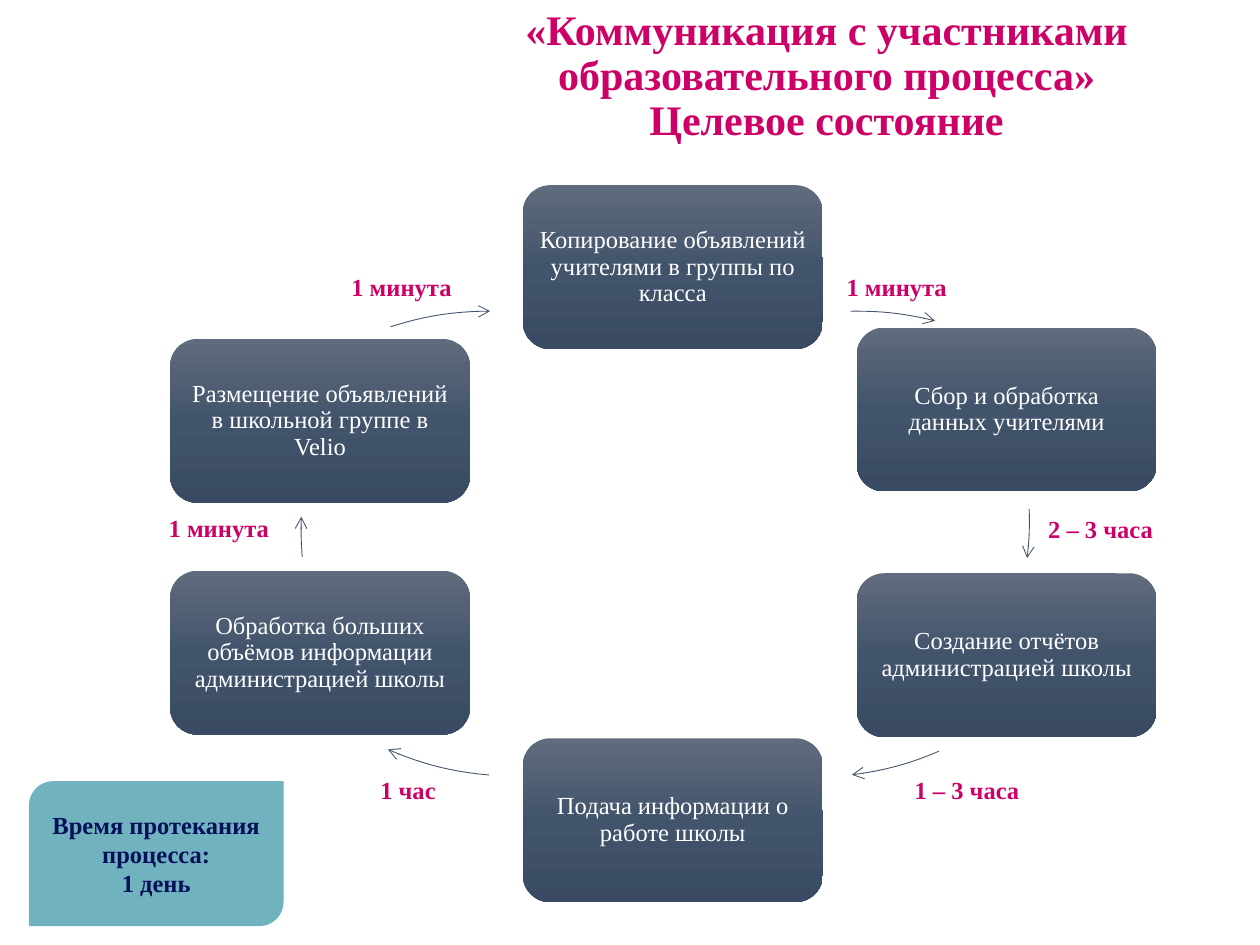
import copy
import dataclasses

import pptx
import pptx.dml.color
import pptx.enum.shapes
import pptx.enum.text
import pptx.oxml
import pptx.oxml.ns
import pptx.util

SHAPES = pptx.enum.shapes.MSO_SHAPE
ALIGN = pptx.enum.text.PP_ALIGN
ANCHOR = pptx.enum.text.MSO_ANCHOR
COLUMNS, ROWS = 100, 75
CELL = pptx.util.Inches(10) // COLUMNS


@dataclasses.dataclass(frozen=True)
class Theme:
    """Colours and type of the slide."""

    font: str = "Times New Roman"
    title_size: int = 24
    body_size: int = 14
    accent: str = "CC0066"
    node_text: str = "FFFFFF"
    node_gradient: tuple = ((0, "606B7D"), (0.5, "42546C"), (1, "394A62"))
    arrow: str = "44546A"
    arrow_width: float = 0.5
    total_fill: str = "71B2BF"
    total_text: str = "04105A"


@dataclasses.dataclass(frozen=True)
class Box:
    """A rectangle in grid columns and rows."""

    left: float
    top: float
    width: float
    height: float

    def inner(self, left, top, width, height):
        """Return a box placed relative to this one."""
        return Box(self.left + left, self.top + top, width, height)

    def lengths(self):
        """Return left, top, width and height in slide units."""
        return [round(value * CELL) for value in dataclasses.astuple(self)]


THEME = Theme()
NODE_WIDTH, NODE_HEIGHT = 23.8, 13
LABEL_HEIGHT = 3.4
ARC_RADIUS = 25.7
DEGREE = 0.6

NODES = (
    (28, 0, "Копирование объявлений учителями в группы по класса"),
    (54.5, 11.3, "Сбор и обработка данных учителями"),
    (54.5, 30.8, "Создание отчётов администрацией школы"),
    (28, 43.9, "Подача информации о работе школы"),
    (0, 30.6, "Обработка больших объёмов информации администрацией школы"),
    (0, 12.2, "Размещение объявлений в школьной группе в Velio"),
)
ARCS = (
    (54.5, 35.7, 268.9, 284),
    (42.5, 26.6, 358, 6.7),
    (50.9, 21.3, 66.8, 82.8),
    (27.5, 21.2, 94.9, 113.4),
    (36.1, 27.3, 175.1, 182.2),
    (25.4, 35.7, 252.1, 270),
)
LABELS = (
    (52.7, 6.4, 11.8, "1 минута"),
    (68.7, 25.6, 11.8, "2 – 3 часа"),
    (58.1, 46.3, 11.8, "1 – 3 часа"),
    (15.7, 46.3, 7.4, "1 час"),
    (-1.1, 25.5, 11.8, "1 минута"),
    (13.4, 6.4, 11.9, "1 минута"),
)


def rgb(value):
    """Return a colour from its hexadecimal form."""
    return pptx.dml.color.RGBColor.from_string(value)


def write(paragraph, text, size, colour, bold=False, align=ALIGN.CENTER, spacing=None):
    """Add one styled run to a paragraph and return the run."""
    paragraph.alignment = align
    paragraph.line_spacing = spacing
    run = paragraph.add_run()
    run.text = text
    run.font.name = THEME.font
    run.font.size = pptx.util.Pt(size)
    run.font.bold = bold
    run.font.color.rgb = rgb(colour)
    return run


def add_preset(slide, kind, box):
    """Add a preset shape without shadow or outline."""
    shape = slide.shapes.add_shape(kind, *box.lengths())
    shape.shadow.inherit = False
    shape.line.fill.background()
    shape.text_frame.word_wrap = True
    shape.text_frame.vertical_anchor = ANCHOR.MIDDLE
    return shape


def fill_gradient(shape, stops):
    """Fill a shape with a gradient running from top to bottom."""
    shape.fill.gradient()
    shape.fill.gradient_angle = 270
    stop_list = shape._element.spPr.find(".//" + pptx.oxml.ns.qn("a:gsLst"))
    while len(stop_list) < len(stops):
        stop_list.append(copy.deepcopy(stop_list[0]))
    for stop, (position, colour) in zip(shape.fill.gradient_stops, stops):
        stop.position = position
        stop.color.rgb = rgb(colour)


def add_node(slide, box, text):
    """Add one step of the cycle."""
    shape = add_preset(slide, SHAPES.ROUNDED_RECTANGLE, box)
    fill_gradient(shape, THEME.node_gradient)
    frame = shape.text_frame
    frame.margin_left = frame.margin_right = pptx.util.Inches(0.06)
    frame.margin_top = frame.margin_bottom = pptx.util.Inches(0.06)
    write(frame.paragraphs[0], text, THEME.body_size, THEME.node_text, spacing=0.9)


def add_arc_arrow(slide, box, start, end):
    """Add a clockwise arc with an arrowhead at its end angle."""
    shape = add_preset(slide, SHAPES.ARC, box)
    shape.adjustments[0] = start * DEGREE
    shape.adjustments[1] = end * DEGREE
    shape.fill.background()
    shape.line.color.rgb = rgb(THEME.arrow)
    shape.line.width = pptx.util.Pt(THEME.arrow_width)
    line = shape._element.spPr.find(pptx.oxml.ns.qn("a:ln"))
    namespace = pptx.oxml.ns.nsdecls("a")
    line.append(pptx.oxml.parse_xml(f'<a:tailEnd {namespace} type="arrow"/>'))


def add_label(slide, box, text):
    """Add the duration beside an arrow."""
    frame = slide.shapes.add_textbox(*box.lengths()).text_frame
    frame.word_wrap = True
    frame.auto_size = pptx.enum.text.MSO_AUTO_SIZE.SHAPE_TO_FIT_TEXT
    write(frame.paragraphs[0], text, THEME.body_size, THEME.accent, True, ALIGN.LEFT)


def add_title(slide, box):
    """Add the two-part heading."""
    frame = slide.shapes.add_textbox(*box.lengths()).text_frame
    frame.word_wrap = True
    frame.vertical_anchor = ANCHOR.MIDDLE
    paragraph = frame.paragraphs[0]
    style = (THEME.title_size, THEME.accent, True, ALIGN.CENTER, 0.9)
    write(paragraph, "«Коммуникация с участниками образовательного процесса»", *style)
    paragraph.add_line_break()
    write(paragraph, "Целевое состояние", *style)


def add_cycle(slide, box):
    """Add the steps, arrows and durations of the process."""
    for (left, top, text), (x, y, start, end) in zip(NODES, ARCS):
        add_node(slide, box.inner(left, top, NODE_WIDTH, NODE_HEIGHT), text)
        circle = box.inner(x - ARC_RADIUS, y - ARC_RADIUS, 2 * ARC_RADIUS, 2 * ARC_RADIUS)
        add_arc_arrow(slide, circle, start, end)
    for left, top, width, text in LABELS:
        add_label(slide, box.inner(left, top, width, LABEL_HEIGHT), text)


def add_total(slide, box):
    """Add the total duration of the process."""
    shape = add_preset(slide, SHAPES.ROUND_2_DIAG_RECTANGLE, box)
    shape.fill.solid()
    shape.fill.fore_color.rgb = rgb(THEME.total_fill)
    frame = shape.text_frame
    style = (THEME.body_size, THEME.total_text, True)
    write(frame.paragraphs[0], "Время протекания процесса:", *style)
    write(frame.add_paragraph(), "1 день", *style)


def main():
    """Build and save the presentation."""
    presentation = pptx.Presentation()
    presentation.slide_width = COLUMNS * CELL
    presentation.slide_height = ROWS * CELL
    slide = presentation.slides.add_slide(presentation.slide_layouts[6])
    add_title(slide, Box(31.2, 0, 68.8, 12.2))
    add_cycle(slide, Box(13.5, 14.7, 78.3, 56.9))
    add_total(slide, Box(2.3, 62, 20.2, 11.5))
    presentation.save("out.pptx")


if __name__ == "__main__":
    main()
